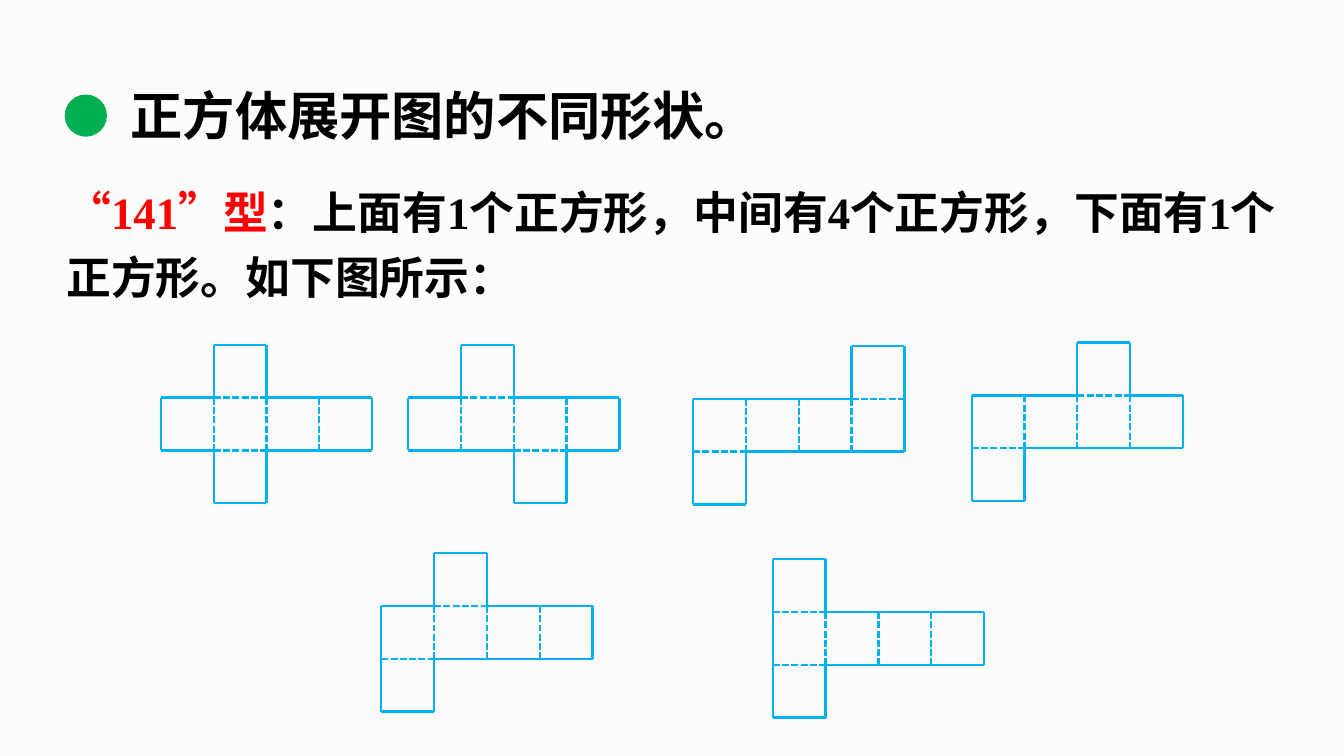
from dataclasses import dataclass

from lxml.etree import SubElement
from pptx import Presentation
from pptx.dml.color import RGBColor
from pptx.enum.dml import MSO_LINE
from pptx.enum.shapes import MSO_CONNECTOR, MSO_SHAPE
from pptx.enum.text import MSO_AUTO_SIZE
from pptx.oxml.ns import qn
from pptx.shapes.group import GroupShape
from pptx.slide import Slide
from pptx.util import Inches, Pt

PAGE_WIDTH = Inches(10)
PAGE_HEIGHT = PAGE_WIDTH * 9 // 16
SQUARE = int(PAGE_WIDTH * 0.0393)
STRIP_LENGTH = 4


@dataclass(frozen=True)
class Theme:
    background: str = "FCFCFC"
    ink: str = "000000"
    accent: str = "FF0000"
    bullet: str = "00B050"
    net: str = "00B0F0"
    title_size: float = 28
    body_size: float = 24
    net_width: float = 1.25
    sans: str = "Noto Sans CJK SC"
    serif: str = "Times New Roman"


@dataclass(frozen=True)
class Area:
    left: float
    top: float
    width: float
    height: float

    def lengths(self) -> tuple[int, int, int, int]:
        return (
            across(self.left),
            down(self.top),
            across(self.width),
            down(self.height),
        )


@dataclass(frozen=True)
class CubeNet:
    left: float
    top: float
    upper_column: int
    lower_column: int


THEME = Theme()
CUBE_NETS = [
    CubeNet(11.97, 52.6, 1, 1),
    CubeNet(30.37, 52.6, 1, 2),
    CubeNet(51.57, 52.75, 3, 0),
    CubeNet(28.37, 80.15, 1, 0),
    CubeNet(72.3, 52.3, 2, 0),
    CubeNet(57.5, 80.95, 0, 0),
]


def across(percent: float) -> int:
    return round(PAGE_WIDTH * percent / 100)


def down(percent: float) -> int:
    return round(PAGE_HEIGHT * percent / 100)


def color(value: str) -> RGBColor:
    return RGBColor.from_string(value)


def add_text(
    page: Slide,
    area: Area,
    spans: list[tuple[str, str]],
    *,
    size: float,
    font: str,
    line_spacing: float = 1.0,
) -> None:
    box = page.shapes.add_textbox(*area.lengths())
    frame = box.text_frame
    frame.word_wrap = True
    frame.auto_size = MSO_AUTO_SIZE.SHAPE_TO_FIT_TEXT
    para = frame.paragraphs[0]
    para.line_spacing = line_spacing
    for text, ink in spans:
        span = para.add_run()
        span.text = text
        span.font.size = Pt(size)
        span.font.bold = True
        span.font.name = font
        span.font.color.rgb = color(ink)
        east_asian = SubElement(span.font._element, qn("a:ea"))
        east_asian.set("typeface", THEME.sans)


def add_bullet(page: Slide, area: Area) -> None:
    bullet = page.shapes.add_shape(MSO_SHAPE.OVAL, *area.lengths())
    bullet.shadow.inherit = False
    bullet.fill.solid()
    bullet.fill.fore_color.rgb = color(THEME.bullet)
    bullet.line.fill.background()


def add_edge(
    group: GroupShape,
    net: CubeNet,
    start: tuple[int, int],
    end: tuple[int, int],
    folded: bool = False,
) -> None:
    left, top = across(net.left), down(net.top)
    edge = group.shapes.add_connector(
        MSO_CONNECTOR.STRAIGHT,
        left + start[0] * SQUARE,
        top + start[1] * SQUARE,
        left + end[0] * SQUARE,
        top + end[1] * SQUARE,
    )
    edge.line.color.rgb = color(THEME.net)
    edge.line.width = Pt(THEME.net_width)
    if folded:
        edge.line.dash_style = MSO_LINE.SQUARE_DOT
    SubElement(edge._element.spPr, qn("a:effectLst"))


def add_cube_net(page: Slide, net: CubeNet) -> None:
    group = page.shapes.add_group_shape()
    for column in range(STRIP_LENGTH + 1):
        inside = 0 < column < STRIP_LENGTH
        add_edge(group, net, (column, 0), (column, 1), inside)
    for row, flap_column, outer_row in (
        (0, net.upper_column, -1),
        (1, net.lower_column, 2),
    ):
        for column in range(STRIP_LENGTH):
            folded = column == flap_column
            add_edge(group, net, (column, row), (column + 1, row), folded)
        for column in (flap_column, flap_column + 1):
            add_edge(group, net, (column, row), (column, outer_row))
        add_edge(group, net, (flap_column, outer_row), (flap_column + 1, outer_row))


def main() -> None:
    deck = Presentation()
    deck.slide_width = PAGE_WIDTH
    deck.slide_height = PAGE_HEIGHT
    page = deck.slides.add_slide(deck.slide_layouts[6])
    page.background.fill.solid()
    page.background.fill.fore_color.rgb = color(THEME.background)

    add_text(
        page,
        Area(3.95, 22.15, 94.6, 18.13),
        [
            ("“141”型", THEME.accent),
            ("：上面有1个正方形，中间有4个正方形，下面有1个正方形。如下图所示：", THEME.ink),
        ],
        size=THEME.body_size,
        font=THEME.serif,
        line_spacing=1.2,
    )
    add_bullet(page, Area(4.82, 12.5, 3.14, 5.58))
    add_text(
        page,
        Area(8.75, 10.2, 48.7, 10.13),
        [("正方体展开图的不同形状。", THEME.ink)],
        size=THEME.title_size,
        font=THEME.sans,
    )
    for net in CUBE_NETS:
        add_cube_net(page, net)
    deck.save("out.pptx")


if __name__ == "__main__":
    main()
